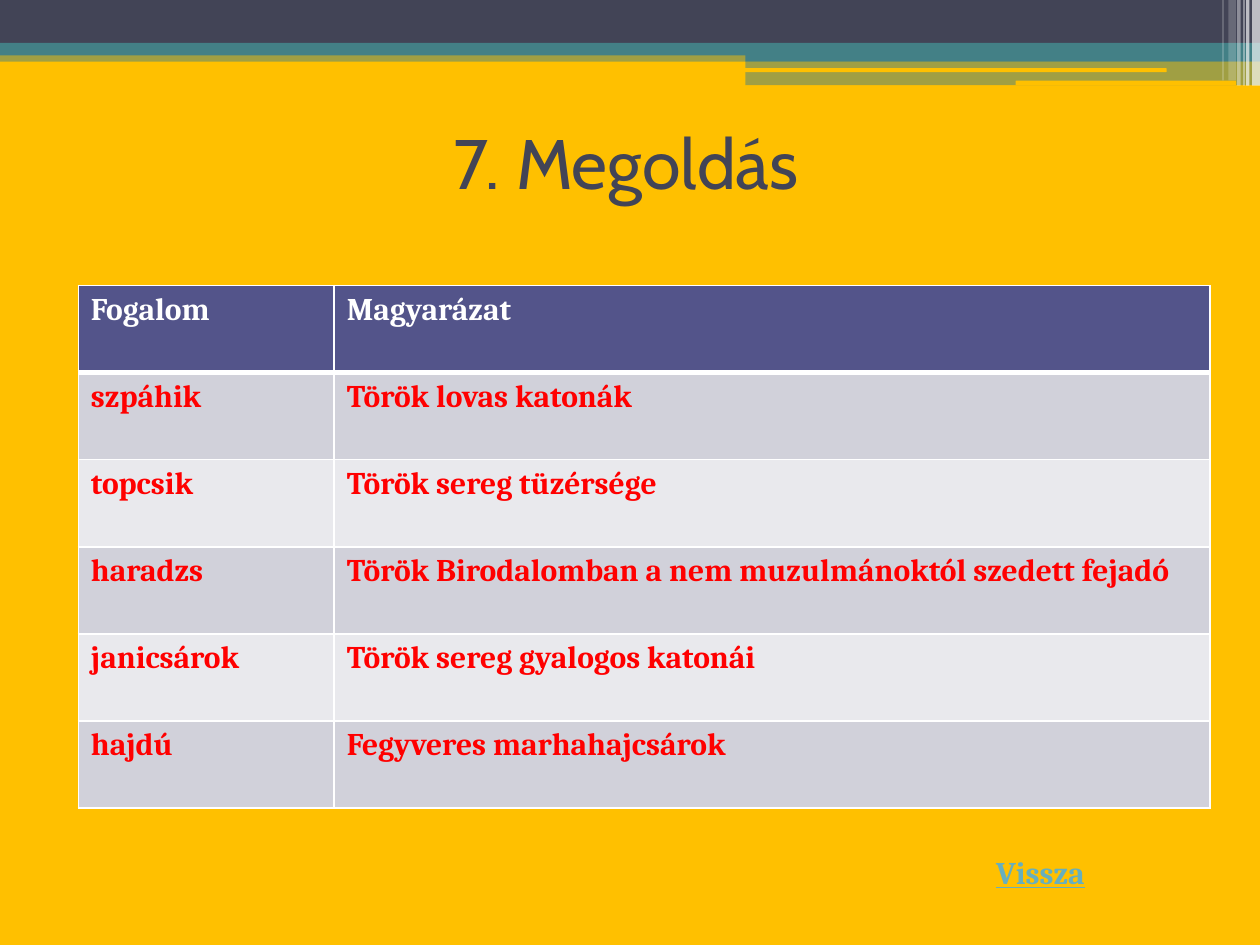
"""Builds a quiz answer slide with a table of Turkish-era terms."""
import lxml.etree
import pptx
import pptx.dml.color
import pptx.enum.shapes
import pptx.enum.text
import pptx.oxml.ns
import pptx.util

Pt = pptx.util.Pt
qn = pptx.oxml.ns.qn
KIND = pptx.enum.shapes.MSO_SHAPE
TEXT = pptx.enum.text

HUES = {
    "gold": "FFC000", "slate": "424456", "teal": "438086", "white": "FFFFFF",
    "head": "53548A", "odd": "D1D1DA", "even": "E9E9ED", "red": "FF0000",
    "link": "67AFBD",
}
FONTS = {
    "title": {"name": "Cabin", "size": Pt(40), "bold": False},
    "cell": {"name": "Cambria", "size": Pt(18), "bold": True},
    "link": {"name": "Cambria", "size": Pt(18), "bold": True, "underline": True},
}
BARS = [
    (0, 28.8, 720, 6.5, "teal", 50),
    (0, 0, 720, 24.5, "slate", 100),
    (0, 24.5, 720, 7.2, "teal", 100),
    (426, 28.1, 294, 7.2, "teal", 100),
    (426, 35.3, 294, 13.4, "teal", 50),
]
LINES = [(425.5, 39, 241.2, 2.2), (580.3, 46.1, 126, 2.6)]
STRIPES = [
    (715.5, 4.5, 49, 65), (712, 2, 49, 65), (710.5, 0.7, 49, 60),
    (707, 2, 49, 40), (702, 4.3, 46, 20), (698.5, 0.7, 46, 30),
]
ROWS = [
    ("Fogalom", "Magyarázat"),
    ("szpáhik", "Török lovas katonák"),
    ("topcsik", "Török sereg tüzérsége"),
    ("haradzs", "Török Birodalomban a nem muzulmánoktól szedett fejadó"),
    ("janicsárok", "Török sereg gyalogos katonái"),
    ("hajdú", "Fegyveres marhahajcsárok"),
]


class Deck:
    """Holds the style and the current slide."""

    def __init__(self, hues, fonts):
        self.hues, self.fonts = hues, fonts
        self.show = pptx.Presentation()
        self.show.slide_width, self.show.slide_height = Pt(720), Pt(540)
        self.slide = self.show.slides.add_slide(self.show.slide_layouts[5])
        self.paint(self.slide.background.fill, "gold")

    def paint(self, fill, hue):
        """Fills with a solid colour."""
        fill.solid()
        fill.fore_color.rgb = pptx.dml.color.RGBColor.from_string(self.hues[hue])

    def words(self, frame, text, style, hue):
        """Adds one styled run."""
        run = frame.paragraphs[0].add_run()
        run.text = text
        for key, value in self.fonts[style].items():
            setattr(run.font, key, value)
        self.paint(run.font.fill, hue)

    def bar(self, x, y, w, h, hue, alpha=100, kind=KIND.RECTANGLE):
        """Adds a plain band, clear in part if alpha is below 100."""
        shape = self.slide.shapes.add_shape(kind, Pt(x), Pt(y), Pt(w), Pt(h))
        shape.shadow.inherit = False
        shape.line.fill.background()
        self.paint(shape.fill, hue)
        if alpha < 100:
            tint = shape._element.spPr.find(qn("a:solidFill"))[0]
            lxml.etree.SubElement(tint, qn("a:alpha"), val=str(alpha * 1000))

    def title(self, text, x, y, w, h):
        """Places and fills the title."""
        shape = self.slide.shapes.title
        shape.left, shape.top, shape.width, shape.height = map(Pt, (x, y, w, h))
        shape.text_frame.vertical_anchor = TEXT.MSO_ANCHOR.MIDDLE
        self.words(shape.text_frame, text, "title", "slate")
        shape.text_frame.paragraphs[0].alignment = TEXT.PP_ALIGN.CENTER

    def label(self, text, x, y, w, h):
        """Adds a text box that grows with its text."""
        frame = self.slide.shapes.add_textbox(Pt(x), Pt(y), Pt(w), Pt(h)).text_frame
        frame.word_wrap = False
        frame.auto_size = TEXT.MSO_AUTO_SIZE.SHAPE_TO_FIT_TEXT
        self.words(frame, text, "link", "link")

    def edge(self, cell, side, width):
        """Draws one white cell border."""
        line = lxml.etree.SubElement(
            cell._tc.get_or_add_tcPr(), qn("a:ln" + side), w=str(Pt(width)))
        fill = lxml.etree.SubElement(line, qn("a:solidFill"))
        lxml.etree.SubElement(fill, qn("a:srgbClr"), val=self.hues["white"])

    def table(self, rows, x, y, widths, height):
        """Adds a table with a dark head and banded rows."""
        table = self.slide.shapes.add_table(
            len(rows), len(widths), Pt(x), Pt(y),
            Pt(sum(widths)), Pt(height * len(rows))).table
        for column, width in zip(table.columns, widths):
            column.width = Pt(width)
        for i, row in enumerate(rows):
            table.rows[i].height = Pt(height)
            band = "head" if i == 0 else "odd" if i % 2 else "even"
            edges = {"L": 1, "R": 1, "T": 3 if i == 1 else 1, "B": 1 if i else 3}
            for j, text in enumerate(row):
                cell = table.cell(i, j)
                for side, width in edges.items():
                    self.edge(cell, side, width)
                self.paint(cell.fill, band)
                self.words(cell.text_frame, text, "cell", "red" if i else "white")


def main():
    """Builds and saves the slide."""
    deck = Deck(HUES, FONTS)
    for bar in BARS:
        deck.bar(*bar)
    for line in LINES:
        deck.bar(*line, "gold", kind=KIND.ROUNDED_RECTANGLE)
    for x, w, h, alpha in STRIPES:
        deck.bar(x, 0, w, h, "white", alpha)
    deck.title("7. Megoldás", 33.8, 50.4, 648, 84.2)
    deck.table(ROWS, 44.8, 163.2, (146.2, 500.4), 49.75)
    deck.label("Vissza", 562.2, 483.8, 74.2, 29)
    deck.show.save("out.pptx")


if __name__ == "__main__":
    main()
